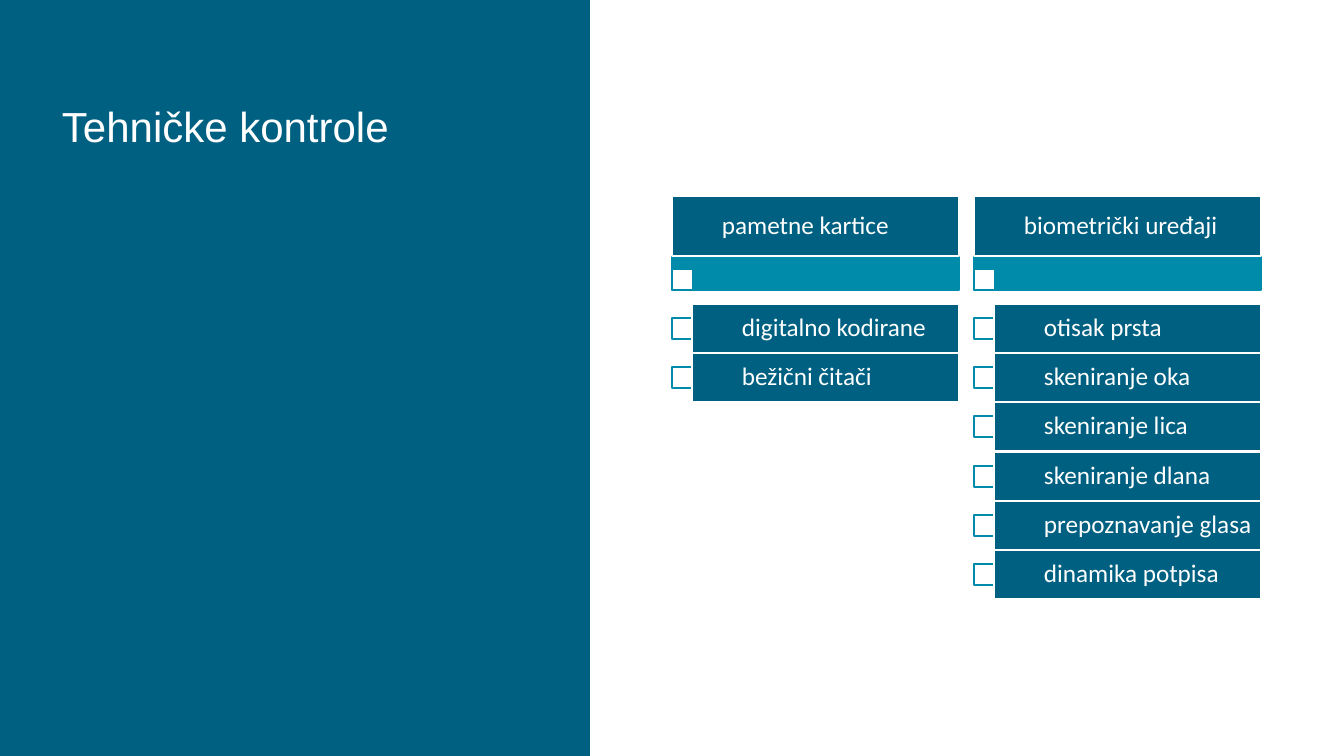
from pptx import Presentation
from pptx.dml.color import RGBColor
from pptx.enum.shapes import MSO_SHAPE
from pptx.enum.text import MSO_ANCHOR, MSO_AUTO_SIZE, PP_ALIGN
from pptx.util import Emu, Pt

RECTANGLE = MSO_SHAPE.RECTANGLE
MIDDLE, BOTTOM = MSO_ANCHOR.MIDDLE, MSO_ANCHOR.BOTTOM
LEFT = PP_ALIGN.LEFT
NO_FIT = MSO_AUTO_SIZE.NONE
TITLE_ONLY = 5

NAVY = RGBColor(0x00, 0x60, 0x81)
TEAL = RGBColor(0x00, 0x8B, 0xAA)
WHITE = RGBColor(0xFE, 0xFF, 0xFE)

EMU_PER_PX = 914400 / 100.8
COLUMN_LEFT, COLUMN_PITCH, COLUMN_WIDTH = 672, 302, 287
HEADER_TOP, HEADER_HEIGHT = 196, 60
BAR_TOP, BAR_HEIGHT = 256, 34
BOX_SIZE = 21
ITEM_TOP, ITEM_HEIGHT, ITEM_INDENT = 304, 49, 20

COLUMNS = [
    ("pametne kartice", ["digitalno kodirane", "bežični čitači"]),
    ("biometrički uređaji", [
        "otisak prsta", "skeniranje oka", "skeniranje lica",
        "skeniranje dlana", "prepoznavanje glasa", "dinamika potpisa",
    ]),
]


def px(length):
    """Turn pixels into EMU."""
    return Emu(round(length * EMU_PER_PX))


def write_text(shape, text, *, font, size, anchor, insets):
    """Write one left-aligned white paragraph into a shape."""
    frame = shape.text_frame
    frame.word_wrap = True
    frame.auto_size = NO_FIT
    frame.vertical_anchor = anchor
    frame.margin_left, frame.margin_top, frame.margin_right, frame.margin_bottom = map(px, insets)
    paragraph = frame.paragraphs[0]
    paragraph.alignment = LEFT
    paragraph.line_spacing = 0.9
    run = paragraph.add_run()
    run.text = text
    run.font.name = font
    run.font.size = Pt(size)
    run.font.color.rgb = WHITE


class ControlsSlide:
    """Hold the slide and its style."""

    def __init__(self, presentation):
        """Add a title-only slide with its background."""
        self.slide = presentation.slides.add_slide(presentation.slide_layouts[TITLE_ONLY])
        background = self.slide.background.fill
        background.solid()
        background.fore_color.rgb = WHITE

    def rectangle(self, left, top, width, height, fill, line=None):
        """Add a filled rectangle."""
        shape = self.slide.shapes.add_shape(RECTANGLE, px(left), px(top), px(width), px(height))
        shape.shadow.inherit = False
        shape.fill.solid()
        shape.fill.fore_color.rgb = fill
        if line is None:
            shape.line.fill.background()
        else:
            shape.line.color.rgb = line
            shape.line.width = Pt(1)
        return shape

    def title(self, text):
        """Place the title on its side panel."""
        title = self.slide.shapes.title
        panel = self.rectangle(0, 0, 590, 756, NAVY)
        title._element.addprevious(panel._element)
        title.left, title.top, title.width, title.height = map(px, (52, 52, 482, 105))
        write_text(title, text, font="Arial", size=30, anchor=BOTTOM, insets=(10, 5, 10, 5))

    def label(self, left, top, width, height, text):
        """Add a dark cell with text."""
        shape = self.rectangle(left, top, width, height, NAVY, WHITE)
        write_text(shape, text, font="Calibri", size=18, anchor=MIDDLE, insets=(50, 4, 4, 4))

    def box(self, left, top):
        """Add a small white square."""
        self.rectangle(left, top, BOX_SIZE, BOX_SIZE, WHITE, TEAL)

    def column(self, left, heading, items):
        """Add a heading, its bar and its items."""
        self.rectangle(left, BAR_TOP, COLUMN_WIDTH, BAR_HEIGHT, TEAL, TEAL)
        self.box(left, BAR_TOP + BAR_HEIGHT - BOX_SIZE)
        self.label(left, HEADER_TOP, COLUMN_WIDTH, HEADER_HEIGHT, heading)
        for index, item in enumerate(items):
            top = ITEM_TOP + round(index * 49.2)
            self.box(left, top + (ITEM_HEIGHT - BOX_SIZE) // 2)
            self.label(left + ITEM_INDENT, top, COLUMN_WIDTH - ITEM_INDENT, ITEM_HEIGHT, item)


def main():
    """Build and save the presentation."""
    presentation = Presentation()
    presentation.slide_width, presentation.slide_height = px(1344), px(756)
    slide = ControlsSlide(presentation)
    slide.title("Tehničke kontrole")
    for index, (heading, items) in enumerate(COLUMNS):
        slide.column(COLUMN_LEFT + index * COLUMN_PITCH, heading, items)
    presentation.save("out.pptx")


if __name__ == "__main__":
    main()
